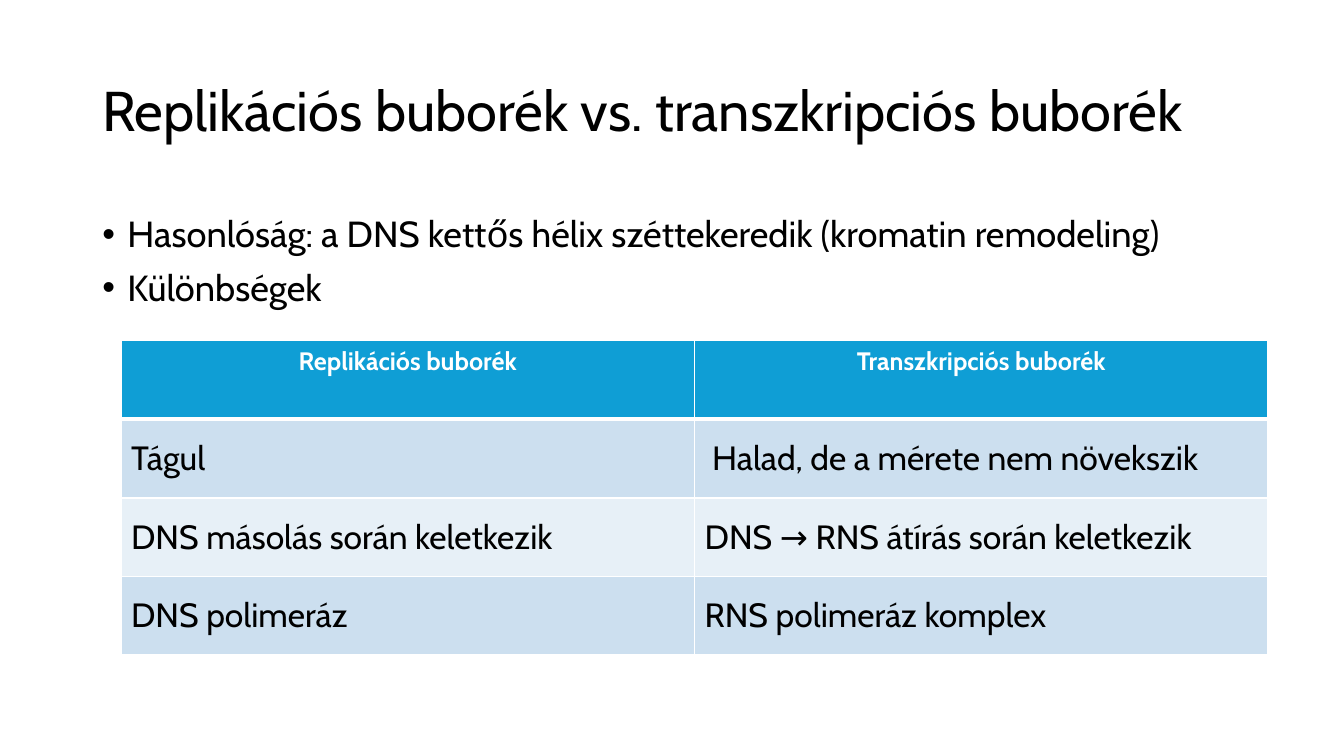
from dataclasses import dataclass

from lxml import etree
from pptx import Presentation
from pptx.dml.color import RGBColor
from pptx.enum.text import MSO_ANCHOR, PP_ALIGN
from pptx.oxml.ns import qn
from pptx.slide import Slide
from pptx.table import _Cell
from pptx.text.text import TextFrame, _Paragraph
from pptx.util import Pt

TOP, MIDDLE = MSO_ANCHOR.TOP, MSO_ANCHOR.MIDDLE
LEFT, CENTER = PP_ALIGN.LEFT, PP_ALIGN.CENTER

BLACK = RGBColor(0x00, 0x00, 0x00)
WHITE = RGBColor(0xFF, 0xFF, 0xFF)
HEADER_BLUE = RGBColor(0x0F, 0x9E, 0xD5)
BAND_DARK = RGBColor(0xCC, 0xDF, 0xEF)
BAND_LIGHT = RGBColor(0xE7, 0xF0, 0xF7)

FONT = "Cabin"
BULLET_INDENT = Pt(18)
THIN, THICK = Pt(1), Pt(3)

TITLE = "Replikációs buborék vs. transzkripciós buborék"
BULLETS = (
    "Hasonlóság: a DNS kettős hélix széttekeredik (kromatin remodeling)",
    "Különbségek",
)


@dataclass(frozen=True)
class ComparisonRow:
    replication: str
    transcription: str
    fill: RGBColor


@dataclass(frozen=True)
class CellStyle:
    size: float
    color: RGBColor
    bold: bool
    alignment: PP_ALIGN
    anchor: MSO_ANCHOR


HEADER_STYLE = CellStyle(18, WHITE, True, CENTER, TOP)
BODY_STYLE = CellStyle(24, BLACK, False, LEFT, MIDDLE)

ROWS = (
    ComparisonRow("Replikációs buborék", "Transzkripciós buborék", HEADER_BLUE),
    ComparisonRow("Tágul", " Halad, de a mérete nem növekszik", BAND_DARK),
    ComparisonRow("DNS másolás során keletkezik",
                  "DNS → RNS átírás során keletkezik", BAND_LIGHT),
    ComparisonRow("DNS polimeráz", "RNS polimeráz komplex", BAND_DARK),
)


def set_font(paragraph: _Paragraph, size: float, color: RGBColor,
             bold: bool = False) -> None:
    font = paragraph.font
    font.name = FONT
    font.size = Pt(size)
    font.bold = bold
    font.color.rgb = color


def add_text_frame(slide: Slide, top: float, height: float,
                   anchor: MSO_ANCHOR) -> TextFrame:
    """Add a wrapping text box in the main text column."""
    box = slide.shapes.add_textbox(Pt(66), Pt(top), Pt(828), Pt(height))
    text_frame = box.text_frame
    text_frame.word_wrap = True
    text_frame.vertical_anchor = anchor
    return text_frame


def add_title(slide: Slide) -> None:
    paragraph = add_text_frame(slide, 28.8, 104.4, MIDDLE).paragraphs[0]
    paragraph.text = TITLE
    paragraph.line_spacing = 0.9
    set_font(paragraph, 40, BLACK)


def add_bullets(slide: Slide) -> None:
    text_frame = add_text_frame(slide, 151.2, 79.2, TOP)
    text_frame.text = "\n".join(BULLETS)
    for paragraph in text_frame.paragraphs:
        paragraph.line_spacing = 0.9
        paragraph.space_before = Pt(10)
        set_font(paragraph, 25.9, BLACK)
        properties = paragraph._p.get_or_add_pPr()
        properties.set("marL", str(BULLET_INDENT))
        properties.set("indent", str(-BULLET_INDENT))
        bullet_font = etree.SubElement(properties, qn("a:buFont"))
        bullet_font.set("typeface", "Arial")
        etree.SubElement(properties, qn("a:buChar")).set("char", "•")
        # The schema wants default run properties after the bullet.
        properties.append(properties.find(qn("a:defRPr")))


def set_borders(cell: _Cell, top: int, bottom: int) -> None:
    """Draw white borders; call before the fill is set."""
    properties = cell._tc.get_or_add_tcPr()
    widths = {"a:lnL": THIN, "a:lnR": THIN, "a:lnT": top, "a:lnB": bottom}
    for tag, width in widths.items():
        line = etree.SubElement(properties, qn(tag), w=str(int(width)))
        fill = etree.SubElement(line, qn("a:solidFill"))
        etree.SubElement(fill, qn("a:srgbClr"), val=str(WHITE))


def fill_cell(cell: _Cell, text: str, fill: RGBColor, style: CellStyle) -> None:
    cell.fill.solid()
    cell.fill.fore_color.rgb = fill
    cell.vertical_anchor = style.anchor
    paragraph = cell.text_frame.paragraphs[0]
    paragraph.text = text
    paragraph.alignment = style.alignment
    set_font(paragraph, style.size, style.color, style.bold)


def add_comparison_table(slide: Slide) -> None:
    frame = slide.shapes.add_table(len(ROWS), 2, Pt(86.4), Pt(243.4),
                                   Pt(819.4), Pt(224.6))
    table = frame.table
    table.first_row = False
    table.horz_banding = False
    for row_index, row in enumerate(ROWS):
        style = HEADER_STYLE if row_index == 0 else BODY_STYLE
        top = THICK if row_index == 1 else THIN
        bottom = THICK if row_index == 0 else THIN
        for column_index, text in enumerate((row.replication, row.transcription)):
            cell = table.cell(row_index, column_index)
            set_borders(cell, top, bottom)
            fill_cell(cell, text, row.fill, style)


def main() -> None:
    presentation = Presentation()
    presentation.slide_width = Pt(960)
    presentation.slide_height = Pt(540)
    slide = presentation.slides.add_slide(presentation.slide_layouts[6])
    add_title(slide)
    add_comparison_table(slide)
    add_bullets(slide)
    presentation.save("out.pptx")


if __name__ == "__main__":
    main()
